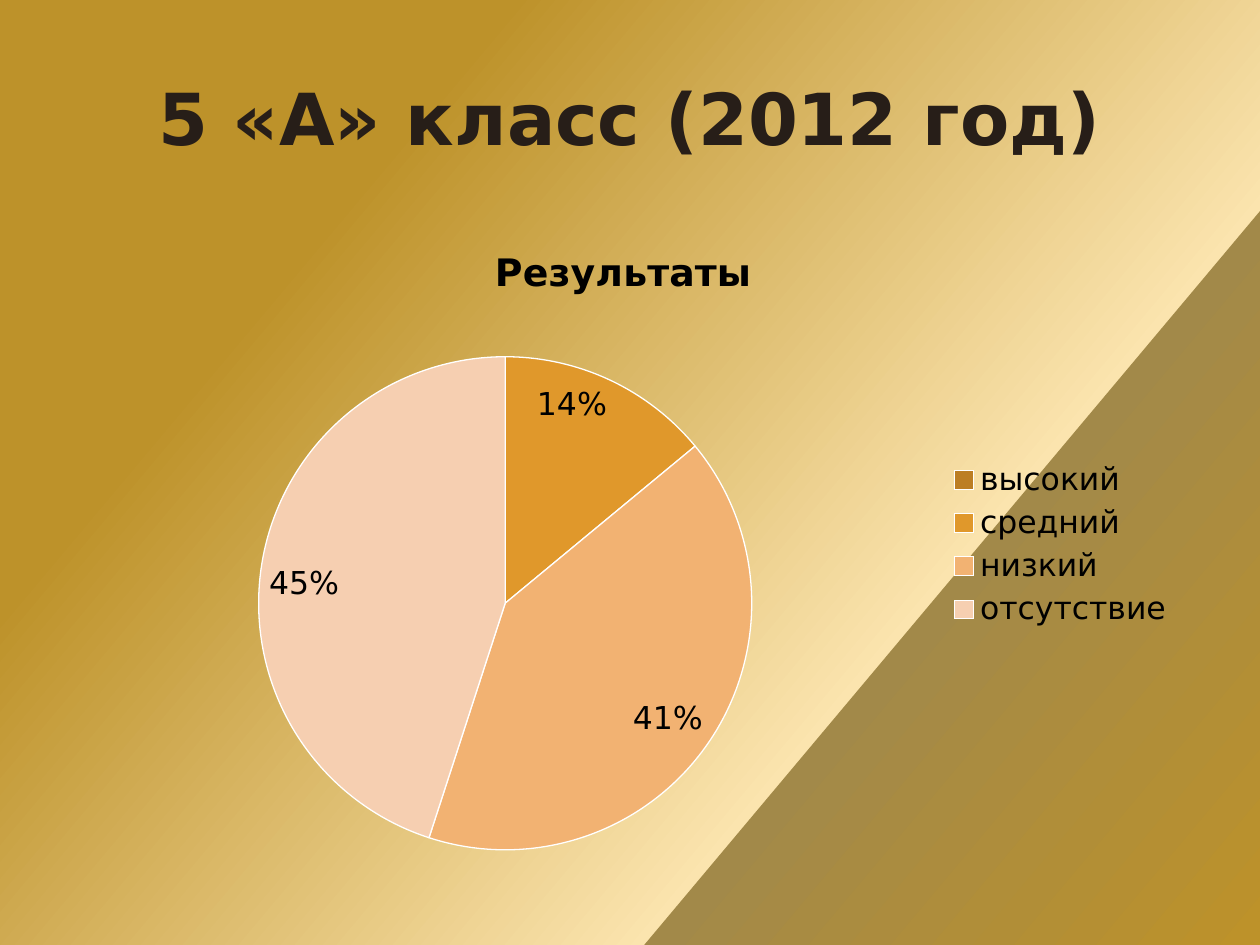
import pptx
import pptx.chart.data
import pptx.dml.color
import pptx.enum.chart
import pptx.enum.text
import pptx.oxml
import pptx.oxml.ns
import pptx.util

Pt = pptx.util.Pt
qn = pptx.oxml.ns.qn
NS = pptx.oxml.ns.nsdecls("a", "c")
FONT = "DejaVu Sans"
HEAD = "5 «А» класс (2012 год)"
NAME = "Результаты "
LEVELS = [
    ("высокий", 0, "BC7E24"),
    ("средний", 14, "E0982B"),
    ("низкий", 41, "F2B272"),
    ("отсутствие ", 45, "F6CFB1"),
]
STOPS = [(0, "BD922A"), (25, "BD922A"), (70, "FBE4AE"),
         (70, "A28949"), (100, "BD922A")]
PIE = {"x": 0.17, "y": 0.21, "w": 0.44, "h": 0.76}


def rgb(code):
    return pptx.dml.color.RGBColor.from_string(code)


def style(font, size, color, bold=False):
    font.name, font.size, font.bold = FONT, Pt(size), bold
    font.color.rgb = rgb(color)


def write(frame, text, size, color):
    """Add one bold run to the first paragraph."""
    para = frame.paragraphs[0]
    para.alignment = pptx.enum.text.PP_ALIGN.CENTER
    run = para.add_run()
    run.text = text
    style(run.font, size, color, True)


def paint(slide):
    """Fill the background with the slanted gradient."""
    fill = slide.background.fill
    fill.gradient()
    fill.gradient_angle = 320
    stops = slide.element.find(".//" + qn("a:gsLst"))
    for old in list(stops):
        stops.remove(old)
    for pos, code in STOPS:
        stops.append(pptx.oxml.parse_xml(
            f'<a:gs {NS} pos="{pos * 1000}"><a:srgbClr val="{code}"/></a:gs>'))


def place(chart):
    """Fix the pie's share of the chart area."""
    area = chart.element.find(".//" + qn("c:plotArea"))
    for old in area.findall(qn("c:layout")):
        area.remove(old)
    modes = '<c:xMode val="edge"/><c:yMode val="edge"/>'
    sizes = "".join(f'<c:{key} val="{val}"/>' for key, val in PIE.items())
    area.insert(0, pptx.oxml.parse_xml(
        f'<c:layout {NS}><c:manualLayout><c:layoutTarget val="inner"/>'
        f'{modes}{sizes}</c:manualLayout></c:layout>'))


def add_pie(slide):
    data = pptx.chart.data.CategoryChartData()
    data.categories = [level[0] for level in LEVELS]
    data.add_series(NAME, [level[1] for level in LEVELS])
    chart = slide.shapes.add_chart(
        pptx.enum.chart.XL_CHART_TYPE.PIE,
        Pt(36), Pt(126), Pt(648), Pt(370.8), data).chart
    style(chart.font, 18, "000000")
    chart.has_title = True
    write(chart.chart_title.text_frame, NAME, 21.6, "000000")
    chart.chart_title.include_in_layout = False
    chart.has_legend = True
    chart.legend.position = pptx.enum.chart.XL_LEGEND_POSITION.RIGHT
    chart.legend.include_in_layout = False
    style(chart.legend.font, 18, "000000")

    plot = chart.plots[0]
    plot.vary_by_categories = True
    series = plot.series[0]
    for spot, level in enumerate(LEVELS):
        form = series.points[spot].format
        form.fill.solid()
        form.fill.fore_color.rgb = rgb(level[2])
        form.line.color.rgb = rgb("FFFFFF")
        form.line.width = Pt(0.75)
    labels = series.data_labels
    labels.show_percentage = True
    labels.show_value = False
    labels.number_format = "0%"
    labels.number_format_is_linked = False
    labels.position = pptx.enum.chart.XL_LABEL_POSITION.INSIDE_END
    style(labels.font, 18, "000000")
    group = series.points[0]._element.find(qn("c:dLbls"))
    group.insert(0, pptx.oxml.parse_xml(
        f'<c:dLbl {NS}><c:idx val="0"/><c:delete val="1"/></c:dLbl>'))
    place(chart)


def main():
    deck = pptx.Presentation()
    deck.slide_width, deck.slide_height = Pt(720), Pt(540)
    slide = deck.slides.add_slide(deck.slide_layouts[5])
    paint(slide)
    title = slide.shapes.title
    title.left, title.top = Pt(36), Pt(21.6)
    title.width, title.height = Pt(648), Pt(90)
    title.text_frame.vertical_anchor = pptx.enum.text.MSO_ANCHOR.MIDDLE
    write(title.text_frame, HEAD, 41, "271E18")
    add_pie(slide)
    deck.save("out.pptx")


if __name__ == "__main__":
    main()
